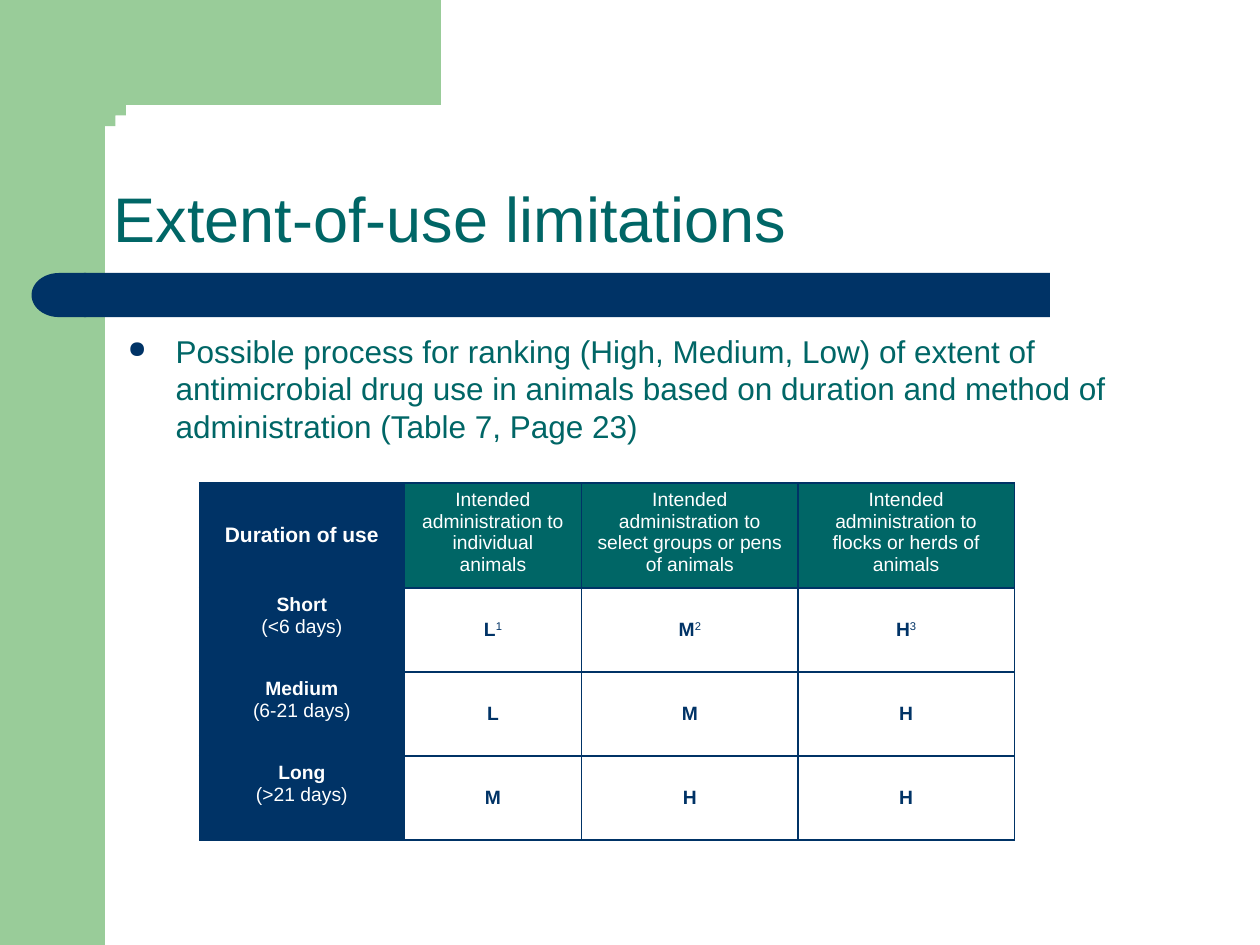
from math import cos, pi, sin

from lxml import etree
from pptx import Presentation
from pptx.dml.color import RGBColor
from pptx.enum.shapes import MSO_SHAPE
from pptx.enum.text import MSO_ANCHOR, PP_ALIGN
from pptx.oxml import parse_xml
from pptx.util import Inches, Pt

RECT, DELAY = MSO_SHAPE.RECTANGLE, MSO_SHAPE.FLOWCHART_DELAY
TOP, MIDDLE, BOTTOM = MSO_ANCHOR.TOP, MSO_ANCHOR.MIDDLE, MSO_ANCHOR.BOTTOM
CENTER = PP_ALIGN.CENTER
NS = "http://schemas.openxmlformats.org/drawingml/2006/main"
COLORS = {"green": "99CC99", "navy": "003366", "teal": "006666", "white": "FFFFFF"}
UNIT = Inches(1) // 12  # the slide is a grid of 120 by 90 units


def paint(shape, color):
    shape.shadow.inherit = False
    shape.fill.solid()
    shape.fill.fore_color.rgb = RGBColor.from_string(COLORS[color])
    shape.line.fill.background()


def style(run, size, color, bold=False):
    font = run.font
    font.name, font.size, font.bold = "Arial", Pt(size), bold
    font.color.rgb = RGBColor.from_string(COLORS[color])


prs = Presentation()
prs.slide_width, prs.slide_height = 120 * UNIT, 90 * UNIT
slide = prs.slides.add_slide(prs.slide_layouts[6])
shapes = slide.shapes

# Green side band
band = shapes.add_shape(RECT, 0, 0, 10 * UNIT, 90 * UNIT)
paint(band, "green")

# Green top block with a rounded inner corner
steps = 16
curve = [(13.6 - 3.6 * sin(i / steps * pi / 2), 14.2 - 4.2 * cos(i / steps * pi / 2))
         for i in range(steps + 1)]
pen = shapes.build_freeform(42, 0, scale=UNIT)
pen.add_line_segments([(42, 10), *curve, (10, 15.4), (6, 15.4), (6, 0)], close=True)
paint(pen.convert_to_shape(), "green")

# Navy bar with a round left end
bar = shapes.add_shape(RECT, 8 * UNIT, 26 * UNIT, 92 * UNIT, int(4.2 * UNIT))
paint(bar, "navy")
end = shapes.add_shape(DELAY, 3 * UNIT, 26 * UNIT, int(5.2 * UNIT), int(4.2 * UNIT))
end.rotation = 180
paint(end, "navy")

# Table: text lines, where a caret marks the start of a superscript
rows = [
    ["Duration of use", "Intended administration to individual animals",
     "Intended administration to select groups or pens of animals",
     "Intended administration to flocks or herds of animals"],
    ["Short\v(<6 days)", "L^1", "M^2", "H^3"],
    ["Medium\v(6-21 days)", "L", "M", "H"],
    ["Long\v(>21 days)", "M", "H", "H"],
]
widths = [19.5, 16.9, 20.6, 20.6]
heights = [10, 8, 8, 8]
frame = shapes.add_table(4, 4, 19 * UNIT, 46 * UNIT,
                         int(sum(widths) * UNIT), sum(heights) * UNIT)
table = frame.table
for col, width in zip(table.columns, widths):
    col.width = int(width * UNIT)
for row, height in zip(table.rows, heights):
    row.height = height * UNIT

for r, texts in enumerate(rows):
    for c, text in enumerate(texts):
        cell = table.cell(r, c)
        head, side = r == 0, c == 0
        cell.vertical_anchor = TOP if head != side else MIDDLE
        cell.fill.solid()
        fill = "navy" if side else "teal" if head else "white"
        cell.fill.fore_color.rgb = RGBColor.from_string(COLORS[fill])

        # Cell text
        label, _, note = text.partition("^")
        para = cell.text_frame.paragraphs[0]
        para.text = label
        para.alignment = CENTER
        ink = "white" if head or side else "navy"
        for i, run in enumerate(para.runs):
            style(run, 12 if head and side else 11, ink, i == 0 and (side or not head))
        if note:
            run = para.add_run()
            run.text = note
            style(run, 11, ink)
            run.font._element.set("baseline", "30000")

        # Cell borders
        props = cell._tc.get_or_add_tcPr()
        for i, edge in enumerate(("lnL", "lnR", "lnT", "lnB")):
            props.insert(i, parse_xml(
                f'<a:{edge} xmlns:a="{NS}" w="12700"><a:solidFill>'
                f'<a:srgbClr val="{COLORS["navy"]}"/></a:solidFill></a:{edge}>'))

# Body bullet
body = shapes.add_textbox(11 * UNIT, 31 * UNIT, 101 * UNIT, 13 * UNIT).text_frame
body.word_wrap = True
body.text = ("Possible process for ranking (High, Medium, Low) of extent of "
             "antimicrobial drug use in animals based on duration and method of "
             "administration (Table 7, Page 23)")
para = body.paragraphs[0]
style(para.runs[0], 18, "teal")
props = para._p.get_or_add_pPr()
props.set("marL", str(Inches(0.38)))
props.set("indent", str(-Inches(0.38)))
tint = etree.SubElement(props, f"{{{NS}}}buClr")
etree.SubElement(tint, f"{{{NS}}}srgbClr", val=COLORS["navy"])
etree.SubElement(props, f"{{{NS}}}buSzPct", val="75000")
etree.SubElement(props, f"{{{NS}}}buChar", char="●")
para.space_before = Pt(3.6)

# Title
title = shapes.add_textbox(10 * UNIT, 10 * UNIT, 104 * UNIT, 15 * UNIT).text_frame
title.word_wrap = True
title.vertical_anchor = BOTTOM
title.margin_left = Inches(0.07)
title.text = "Extent-of-use limitations"
title.paragraphs[0].line_spacing = 0.9
style(title.paragraphs[0].runs[0], 36, "teal")

prs.save("out.pptx")
